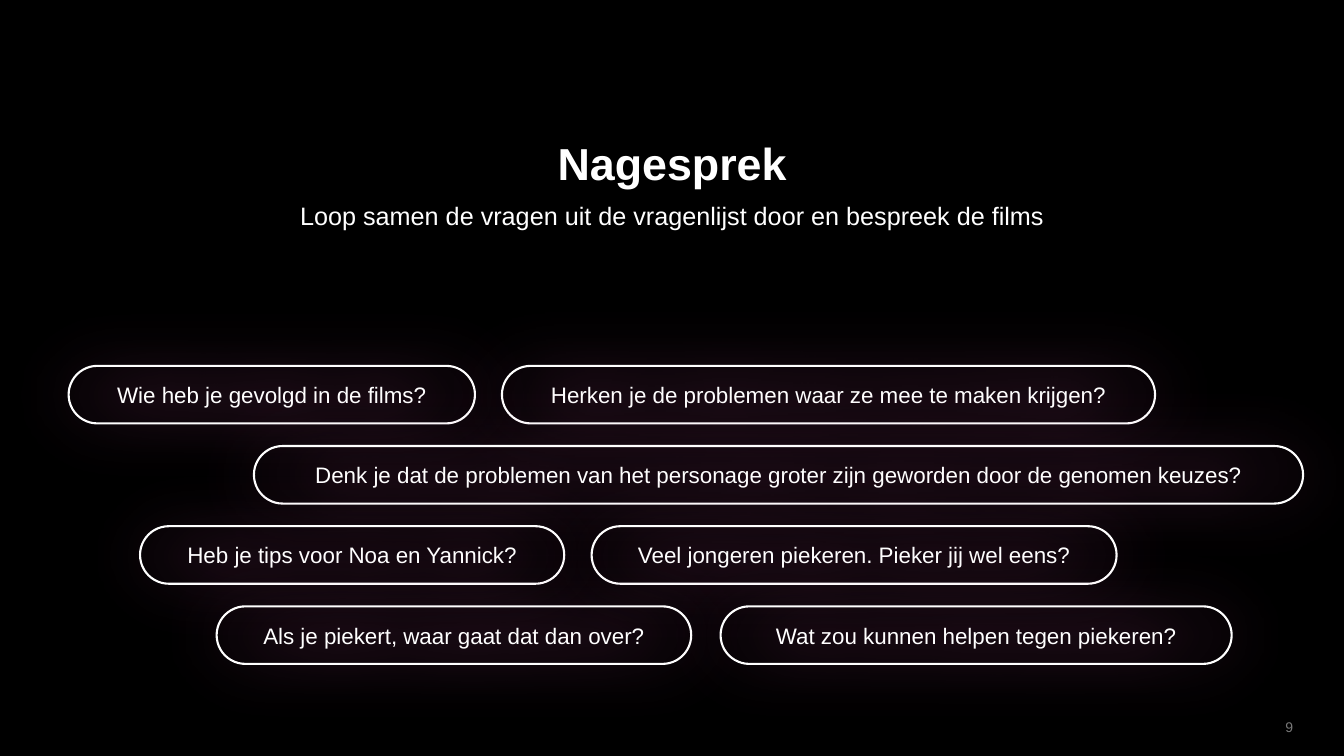
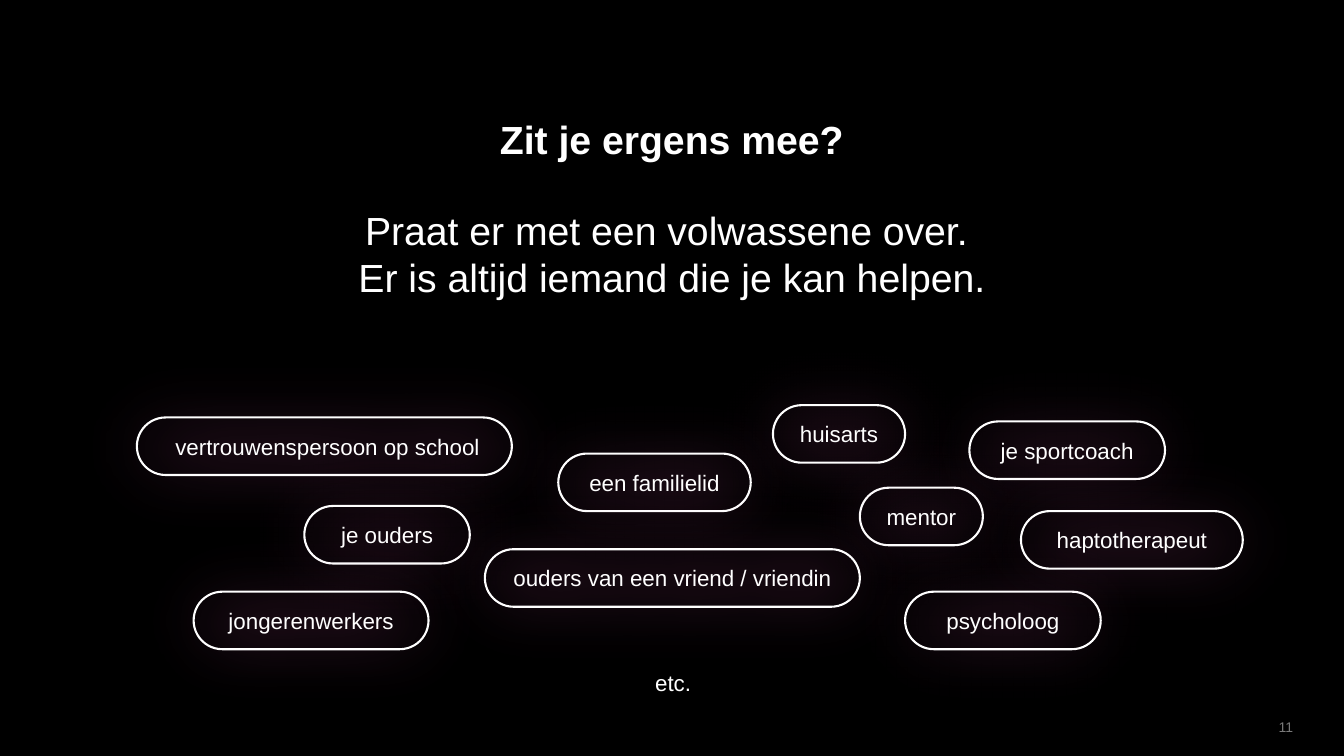
"""Build two black slides with a title, a line of text and glowing pills."""
import lxml.etree
import pptx
import pptx.dml.color
import pptx.enum.shapes
import pptx.enum.text
import pptx.oxml.ns
import pptx.util

Cm = pptx.util.Cm
Pt = pptx.util.Pt
qn = pptx.oxml.ns.qn
ALIGN = pptx.enum.text.PP_ALIGN
ANCHOR = pptx.enum.text.MSO_ANCHOR
ROUND = pptx.enum.shapes.MSO_SHAPE.ROUNDED_RECTANGLE

BLACK, WHITE, GREY, PINK = "000000", "FFFFFF", "797979", "C8539F"
TALL = 1.45
TOP, STEP = 9.22, 2.02


def tint(code):
    return pptx.dml.color.RGBColor.from_string(code)


def write(shape, lines, size, box=None, bold=False, color=WHITE,
          align=ALIGN.CENTER, anchor=ANCHOR.TOP):
    if box:
        for name, value in zip(("left", "top", "width", "height"), box):
            setattr(shape, name, Cm(value))
    frame = shape.text_frame
    frame.text = "\n".join(lines)
    look = {"word_wrap": True, "vertical_anchor": anchor,
            "auto_size": pptx.enum.text.MSO_AUTO_SIZE.NONE}
    for name, value in look.items():
        setattr(frame, name, value)
    for para in frame.paragraphs:
        para.alignment = align
        para.space_before = Pt(0)
        for run in para.runs:
            style = {"name": "Arial", "size": Pt(size), "bold": bold}
            for name, value in style.items():
                setattr(run.font, name, value)
            run.font.color.rgb = tint(color)


asks = [
    (0, 1.73, 10.24, "Wie heb je gevolgd in de films?"),
    (0, 12.65, 16.46, "Herken je de problemen waar ze mee te maken krijgen?"),
    (1, 6.4, 26.44, "Denk je dat de problemen van het personage groter zijn "
                    "geworden door de genomen keuzes?"),
    (2, 3.53, 10.69, "Heb je tips voor Noa en Yannick?"),
    (2, 14.91, 13.23, "Veel jongeren piekeren. Pieker jij wel eens?"),
    (3, 5.46, 11.96, "Als je piekert, waar gaat dat dan over?"),
    (3, 18.16, 12.88, "Wat zou kunnen helpen tegen piekeren?"),
]
helpers = [
    (3.45, 10.52, 9.45, " vertrouwenspersoon op school"),
    (21.67, 12.29, 3.1, "mentor"),
    (14.07, 11.43, 4.85, "een familielid"),
    (7.67, 12.75, 4.17, "je ouders"),
    (12.22, 13.84, 9.45, "ouders van een vriend / vriendin"),
    (19.48, 10.21, 3.33, "huisarts"),
    (4.88, 14.91, 5.92, "jongerenwerkers"),
    (22.81, 14.91, 4.93, "psycholoog"),
    (24.43, 10.62, 4.93, "je sportcoach"),
    (25.73, 12.88, 5.59, "haptotherapeut"),
]
pages = [
    {"number": "9",
     "title": (["Nagesprek"], 32, (10.44, 3.3, 13, 1.63), True),
     "body": (["Loop samen de vragen uit de vragenlijst door en bespreek de films"],
              18, (7.03, 4.93, 19.81, 1.03)),
     "pills": [(left, TOP + row * STEP, width, text)
               for row, left, width, text in asks]},
    {"number": "11",
     "title": (["Zit je ergens mee?"], 28, (8.23, 2.79, 17.4, 1.4), True),
     "body": (["Praat er met een volwassene over. ",
               "Er is altijd iemand die je kan helpen."],
              28, (8.23, 5.06, 17.4, 3.2)),
     "pills": helpers,
     "close": (["etc."], 16, (14.88, 16.74, 4.17, TALL))},
]

deck = pptx.Presentation()
deck.slide_width, deck.slide_height = Cm(33.87), Cm(19.05)
back = deck.slide_master.background.fill
back.solid()
back.fore_color.rgb = tint(BLACK)

for page in pages:
    slide = deck.slides.add_slide(deck.slide_layouts[0])
    shapes = slide.shapes
    write(shapes.title, *page["title"])
    write(slide.placeholders[1], *page["body"])
    for left, top, width, text in page["pills"]:
        pill = shapes.add_shape(ROUND, Cm(left), Cm(top), Cm(width), Cm(TALL))
        pill.adjustments[0] = 0.5
        pill.fill.background()
        pill.line.color.rgb = tint(WHITE)
        pill.line.width = Pt(1.5)
        pill.shadow.inherit = False
        glow = lxml.etree.SubElement(
            pill._element.spPr.find(qn("a:effectLst")), qn("a:outerShdw"),
            blurRad=str(Pt(42.4)), dist="0", dir="0", algn="ctr", rotWithShape="0")
        lxml.etree.SubElement(glow, qn("a:srgbClr"), val=PINK)
        write(pill, [text], 16, anchor=ANCHOR.MIDDLE)
    if "close" in page:
        write(shapes.add_textbox(0, 0, 0, 0), *page["close"])
    write(shapes.add_textbox(0, 0, 0, 0), [page["number"]], 10,
          (25.22, 17.81, 7.62, 1.02), color=GREY, align=ALIGN.RIGHT,
          anchor=ANCHOR.MIDDLE)

deck.save("out.pptx")
